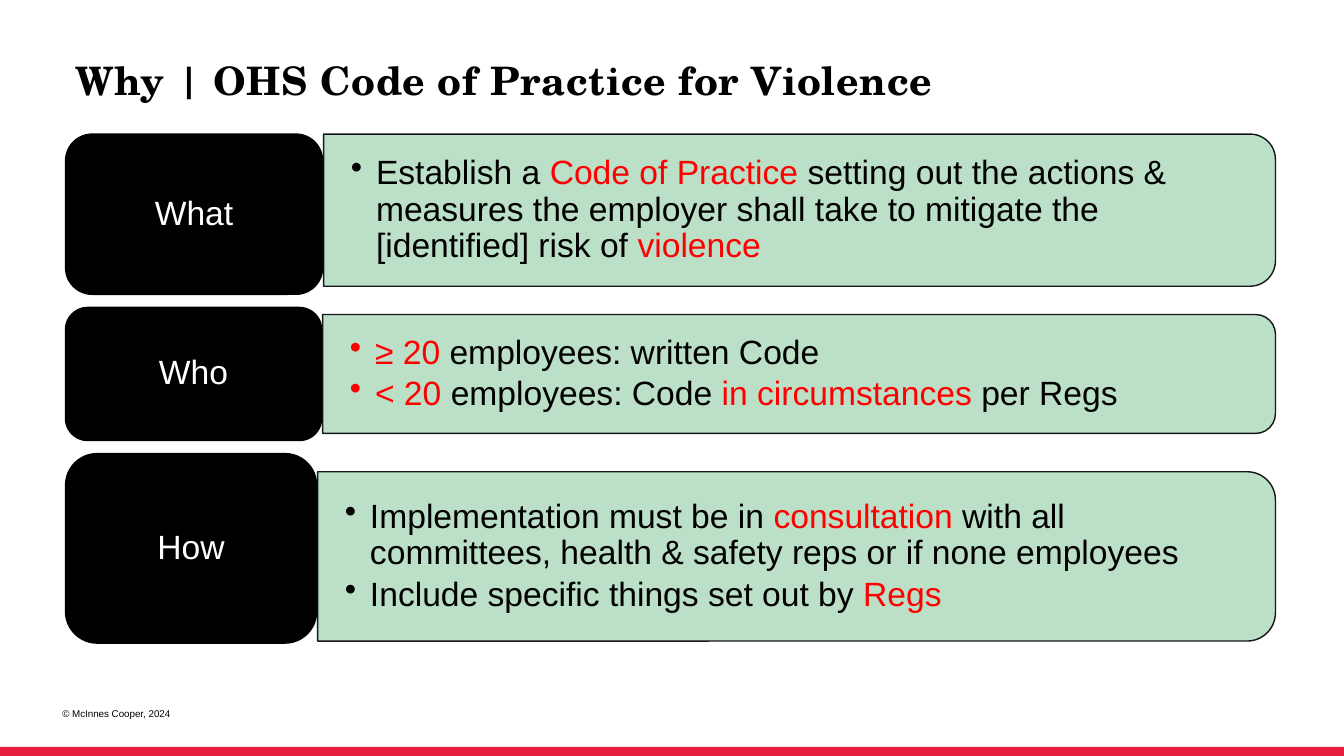
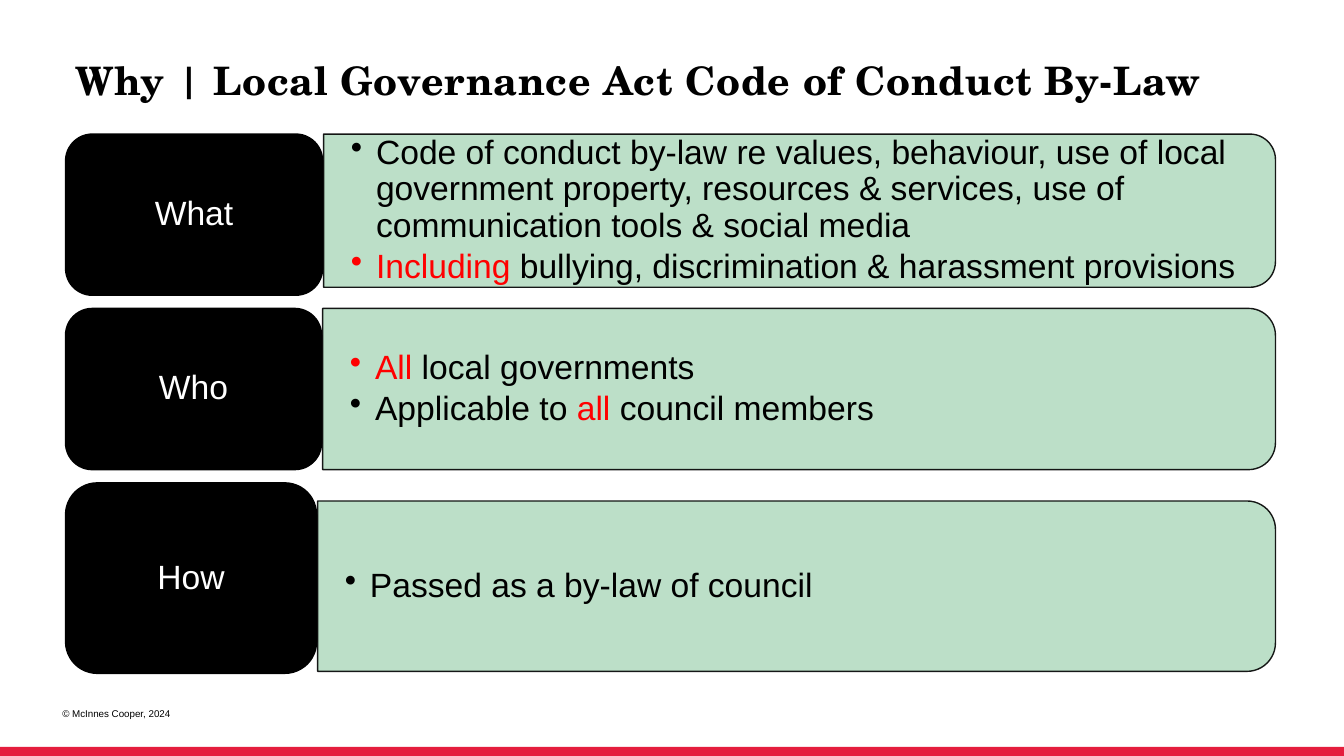
from lxml.etree import SubElement
from pptx import Presentation
from pptx.dml.color import RGBColor
from pptx.enum.shapes import MSO_SHAPE
from pptx.enum.text import MSO_ANCHOR, PP_ALIGN
from pptx.oxml.ns import qn
from pptx.util import Inches, Pt

BLACK = RGBColor(0x00, 0x00, 0x00)
WHITE = RGBColor(0xFF, 0xFF, 0xFF)
RED = RGBColor(0xFF, 0x00, 0x00)
GREEN = RGBColor(0xB5, 0xDC, 0xC3)
CRIMSON = RGBColor(0xE5, 0x1E, 0x3D)

SERIF = "TeX Gyre Schola"
SANS = "Arial"

LEFT, RIGHT = 0.65, 12.65
TOP, GAP = 1.33, 0.13
ROWS = [("What", 3.21, -0.04), ("Who", 3.2, 0), ("How", 3.15, 0.08)]

SLIDES = [
    ("Why | OHS Code of Practice for Violence", [
        (1.59, 1.51, [
            "Establish a *Code of Practice *setting out the actions & measures "
            "the employer shall take to mitigate the [identified] risk of *violence*",
        ]),
        (1.32, 1.18, [
            "*≥ 20 *employees: written Code",
            "*< 20 *employees: Code *in circumstances *per Regs",
        ]),
        (1.88, 1.68, [
            "Implementation must be in *consultation* with all committees, "
            "health & safety reps or if none employees",
            "Include specific things set out by *Regs*",
        ]),
    ]),
    ("Why | Local Governance Act Code of Conduct By-Law", [
        (1.6, 1.52, [
            "Code of conduct by-law re values, behaviour, use of local government "
            "property, resources & services, use of communication tools & social media",
            "*Including* bullying, discrimination & harassment provisions",
        ]),
        (1.6, 1.6, [
            "*All* local governments",
            "Applicable to *all* council members",
        ]),
        (1.89, 1.69, ["Passed as a by-law of council"]),
    ]),
]


def set_font(para, name, size, color=BLACK, bold=False):
    para.font.name = name
    para.font.size = Pt(size)
    para.font.color.rgb = color
    para.font.bold = bold


def add_box(slide, x, y, w, h, wrap=True):
    box = slide.shapes.add_textbox(Inches(x), Inches(y), Inches(w), Inches(h))
    box.text_frame.word_wrap = wrap
    return box.text_frame


def add_block(slide, kind, x, y, w, h, fill, line=None):
    block = slide.shapes.add_shape(kind, Inches(x), Inches(y), Inches(w), Inches(h))
    block.shadow.inherit = False
    block.fill.solid()
    block.fill.fore_color.rgb = fill
    if line is None:
        block.line.fill.background()
    else:
        block.line.color.rgb = line
        block.line.width = Pt(1)
    return block


def add_frame(slide, title):
    add_block(slide, MSO_SHAPE.RECTANGLE, 0, 7.41, 13.33, 0.09, CRIMSON)
    foot = add_box(slide, 0.52, 6.97, 1.3, 0.22, wrap=False).paragraphs[0]
    foot.text = "© McInnes Cooper, 2024"
    set_font(foot, SANS, 7)
    head = add_box(slide, LEFT, 0.56, 12, 0.57).paragraphs[0]
    head.text = title
    head.line_spacing = 0.9
    set_font(head, SERIF, 28, bold=True)
    head.runs[0]._r.get_or_add_rPr().set("spc", "50")


def add_tag(slide, label, y, w, h):
    tag = add_block(slide, MSO_SHAPE.ROUNDED_RECTANGLE, LEFT, y, w, h, BLACK, BLACK)
    tag.text_frame.vertical_anchor = MSO_ANCHOR.MIDDLE
    para = tag.text_frame.paragraphs[0]
    para.text = label
    para.alignment = PP_ALIGN.CENTER
    para.line_spacing = 0.9
    set_font(para, SANS, 24, WHITE)


def add_panel(slide, x, mid, h):
    w = RIGHT - x
    panel = add_block(slide, MSO_SHAPE.ROUND_2_SAME_RECTANGLE,
                      x + (w - h) / 2, mid - w / 2, h, w, GREEN, BLACK)
    panel.rotation = 90
    for color in panel._element.spPr.iter(qn("a:srgbClr")):
        SubElement(color, qn("a:alpha"), val="90000")


def add_bullet(para, text):
    props = para._p.get_or_add_pPr()
    props.set("marL", str(Inches(0.25)))
    props.set("indent", str(-Inches(0.25)))
    para.line_spacing = 0.9
    para.space_after = Pt(3.6)
    SubElement(props, qn("a:buChar"), char="•")
    set_font(para, SANS, 24)
    for pos, part in enumerate(text.split("*")):
        if part:
            run = para.add_run()
            run.text = part
            run.font.color.rgb = RED if pos % 2 else BLACK


def add_list(slide, x, mid, h, lines):
    frame = add_box(slide, x, mid - h / 2, RIGHT - x - 0.07, h)
    frame.vertical_anchor = MSO_ANCHOR.MIDDLE
    frame.margin_left = frame.margin_right = Inches(0.27)
    frame.margin_top = frame.margin_bottom = Inches(0.05)
    for pos, line in enumerate(lines):
        add_bullet(frame.add_paragraph() if pos else frame.paragraphs[0], line)


def add_rows(slide, items):
    y = TOP
    for (label, x, shift), (tall, high, lines) in zip(ROWS, items):
        mid = y + tall / 2 + shift
        add_panel(slide, x, mid, high)
        add_list(slide, x, mid, high, lines)
        add_tag(slide, label, y, x - LEFT - 0.01, tall)
        y += tall + GAP


def main():
    deck = Presentation()
    deck.slide_width, deck.slide_height = Inches(13.33), Inches(7.5)
    for title, items in SLIDES:
        slide = deck.slides.add_slide(deck.slide_layouts[6])
        add_frame(slide, title)
        add_rows(slide, items)
    deck.save("out.pptx")


if __name__ == "__main__":
    main()
